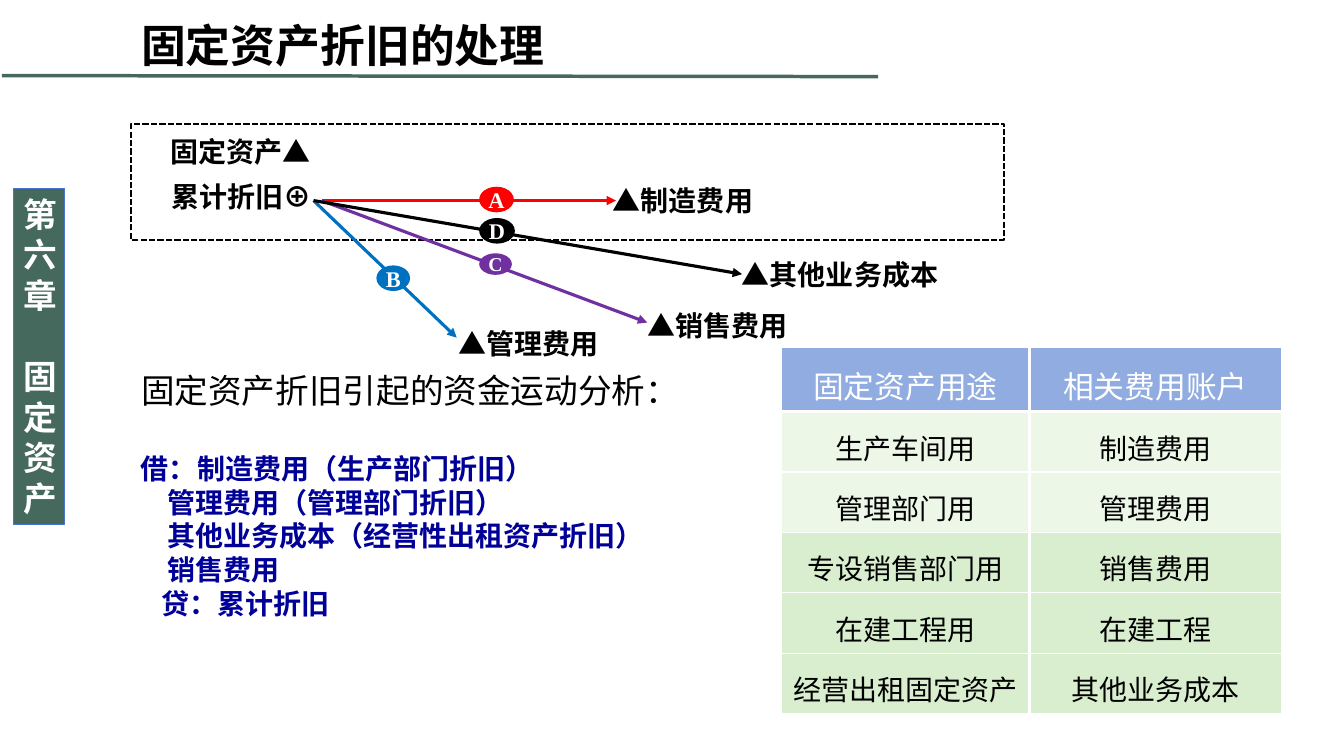
from lxml import etree
from pptx import Presentation
from pptx.dml.color import RGBColor
from pptx.enum.dml import MSO_LINE
from pptx.enum.shapes import MSO_CONNECTOR, MSO_SHAPE
from pptx.enum.text import MSO_ANCHOR, MSO_AUTO_SIZE, PP_ALIGN
from pptx.oxml.ns import qn
from pptx.util import Inches, Pt

STRAIGHT = MSO_CONNECTOR.STRAIGHT
RECT, NODE = MSO_SHAPE.RECTANGLE, MSO_SHAPE.FLOWCHART_CONNECTOR
TOP, MIDDLE = MSO_ANCHOR.TOP, MSO_ANCHOR.MIDDLE
LEFT, CENTER = PP_ALIGN.LEFT, PP_ALIGN.CENTER

CJK, LATIN = "Noto Sans CJK SC", "Times New Roman"
BLACK, WHITE, GREEN, NAVY = "000000", "FFFFFF", "45695D", "000099"
W, H = 13.33, 7.5
MARGIN = 1.3
LABEL_H = 0.44

TITLE = "固定资产折旧的处理"
CHAPTER = ["第六章", "固定资产"]
INTRO = "固定资产折旧引起的资金运动分析："
LABELS = [
    ("固定资产▲", 1.59, 1.28, 1.76),
    ("▲其他业务成本", 7.26, 2.5, 2.37),
    ("▲销售费用", 6.32, 3.01, 1.83),
    ("▲管理费用", 4.45, 3.19, 1.65),
    ("▲制造费用", 5.98, 1.77, 1.62),
    ("累计折旧⊕", 1.6, 1.73, 1.77),
]
FLOW_Y = 1.99
FLOWS = [
    (3.19, 6.11, 1.99, "FF0000"),
    (3.11, 4.53, 3.35, "0070C0"),
    (3.19, 6.42, 3.2, "7030A0"),
    (3.11, 7.36, 2.72, BLACK),
]
NODES = [
    ("D", 4.76, 2.17, 0.34, 0.24, 16, BLACK),
    ("C", 4.76, 2.52, 0.31, 0.2, 14, "7030A0"),
    ("A", 4.76, 1.86, 0.33, 0.24, 16, "FF0000"),
    ("B", 3.74, 2.64, 0.32, 0.24, 16, "0070C0"),
]
ENTRY = [
    ("借：制造费用（生产部门折旧）", 0),
    ("管理费用（管理部门折旧）", 0.26),
    ("其他业务成本（经营性出租资产折旧）", 0.26),
    ("销售费用", 0.26),
    ("贷：累计折旧", 0.2),
]
ACCOUNTS = [
    ("固定资产用途", "相关费用账户"),
    ("生产车间用", "制造费用"),
    ("管理部门用", "管理费用"),
    ("专设销售部门用", "销售费用"),
    ("在建工程用", "在建工程"),
    ("经营出租固定资产", "其他业务成本"),
]
COL_W = [2.46, 2.5]
HEAD_H, ROW_H = 0.63, 0.6
ROW_FILLS = ["91ACE0"] + ["ECF7E8"] * 2 + ["D8EECE"] * 3


def rgb(value):
    return RGBColor.from_string(value)


def box(x, y, w, h):
    return [Inches(v) for v in (x, y, w, h)]


def place(sp, x, y, w, h):
    sp.left, sp.top, sp.width, sp.height = box(x, y, w, h)


def frame(sp, anchor, inset=(0.1, 0.05)):
    tf = sp.text_frame
    tf.word_wrap = True
    tf.auto_size = MSO_AUTO_SIZE.NONE
    tf.vertical_anchor = anchor
    tf.margin_left = tf.margin_right = Inches(inset[0])
    tf.margin_top = tf.margin_bottom = Inches(inset[1])
    return tf


def write(p, text, size, color, bold=False, align=LEFT, font=CJK):
    p.alignment = align
    r = p.add_run()
    r.text = text
    r.font.size, r.font.bold = Pt(size), bold
    r.font.color.rgb = rgb(color)
    r.font.name = font
    etree.SubElement(r._r.get_or_add_rPr(), qn("a:ea"), typeface=font)


def add_shape(s, kind, at, fill, line, width):
    sp = s.shapes.add_shape(kind, *box(*at))
    sp.shadow.inherit = False
    sp.fill.solid()
    sp.fill.fore_color.rgb = rgb(fill)
    sp.line.color.rgb = rgb(line)
    sp.line.width = Pt(width)
    return sp


def add_line(s, x1, y1, x2, y2, color, width, arrow=False):
    cx = s.shapes.add_connector(STRAIGHT, *box(x1, y1, x2, y2))
    cx.line.color.rgb = rgb(color)
    cx.line.width = Pt(width)
    if arrow:
        etree.SubElement(cx.line._get_or_add_ln(), qn("a:tailEnd"), type="triangle")
    etree.SubElement(cx._element.spPr, qn("a:effectLst"))


def border(cell, edge, width):
    ln = etree.Element(qn("a:" + edge), w=str(Pt(width)))
    fill = etree.SubElement(ln, qn("a:solidFill"))
    etree.SubElement(fill, qn("a:srgbClr"), val=WHITE)
    return ln


def add_accounts(s):
    rows = len(ACCOUNTS)
    at = box(7.75, 3.45, sum(COL_W), HEAD_H + ROW_H * (rows - 1))
    table = s.shapes.add_table(rows, len(COL_W), *at).table
    for j, width in enumerate(COL_W):
        table.columns[j].width = Inches(width)
    for i, texts in enumerate(ACCOUNTS):
        head = i == 0
        table.rows[i].height = Inches(HEAD_H if head else ROW_H)
        for j, text in enumerate(texts):
            cell = table.cell(i, j)
            cell.vertical_anchor = MIDDLE
            cell.margin_top = cell.margin_bottom = Inches(0.04)
            cell.fill.solid()
            cell.fill.fore_color.rgb = rgb(ROW_FILLS[i])
            widths = {"lnL": 3 if j else 1, "lnR": 1 if j else 3,
                      "lnT": 3 if i == 1 else 1, "lnB": 3 if head else 1}
            tcPr = cell._tc.get_or_add_tcPr()
            for k, (edge, width) in enumerate(widths.items()):
                tcPr.insert(k, border(cell, edge, width))
            p = cell.text_frame.paragraphs[0]
            p.line_spacing = 1.25
            write(p, text, 22 if head else 20, WHITE if head else BLACK, align=CENTER)


def main():
    prs = Presentation()
    prs.slide_width, prs.slide_height = Inches(W), Inches(H)
    s = prs.slides.add_slide(prs.slide_layouts[1])
    title, body = s.placeholders

    place(title, MARGIN, 0.12, 7.14, 0.64)
    write(frame(title, MIDDLE).paragraphs[0], TITLE, 32, BLACK, True)

    place(body, MARGIN, 3.63, 11.5, 1.64)
    p = frame(body, TOP).paragraphs[0]
    pPr = p._p.get_or_add_pPr()
    pPr.set("marL", "0")
    pPr.set("indent", "0")
    etree.SubElement(pPr, qn("a:buNone"))
    p.line_spacing, p.space_before = Pt(28), Pt(0)
    write(p, INTRO, 24, BLACK)

    add_line(s, 0.02, 0.75, 8.71, 0.76, GREEN, 2.5)
    tf = frame(add_shape(s, RECT, (0.13, 1.87, 0.51, 3.33), GREEN, "4874CB", 0.75), TOP)
    for i, text in enumerate(CHAPTER):
        p = tf.add_paragraph() if i else tf.paragraphs[0]
        p.line_spacing, p.space_before = Pt(29), Pt(29 * i)
        write(p, text, 24, WHITE, True)

    assets = add_shape(s, RECT, (MARGIN, 1.23, 8.66, 1.15), WHITE, BLACK, 1.5)
    assets.line.dash_style = MSO_LINE.SQUARE_DOT
    for x1, x2, y2, color in FLOWS:
        add_line(s, x1, FLOW_Y, x2, y2, color, 2.25, True)
    for text, x, y, w in LABELS:
        sp = s.shapes.add_textbox(*box(x, y, w, LABEL_H))
        write(frame(sp, MIDDLE).paragraphs[0], text, 20, BLACK, True)
    for text, x, y, w, h, size, color in NODES:
        sp = add_shape(s, NODE, (x, y, w, h), color, color, 1)
        tf = frame(sp, MIDDLE, (0, 0))
        tf.word_wrap = False
        write(tf.paragraphs[0], text, size, WHITE, True, CENTER, LATIN)

    tf = frame(s.shapes.add_textbox(*box(MARGIN, 4.49, 6.4, 1.65)), MIDDLE)
    for i, (text, indent) in enumerate(ENTRY):
        p = tf.add_paragraph() if i else tf.paragraphs[0]
        p._p.get_or_add_pPr().set("marL", str(Inches(indent)))
        p.line_spacing = Pt(24)
        write(p, text, 20, NAVY, True)

    add_accounts(s)
    prs.save("out.pptx")


if __name__ == "__main__":
    main()
